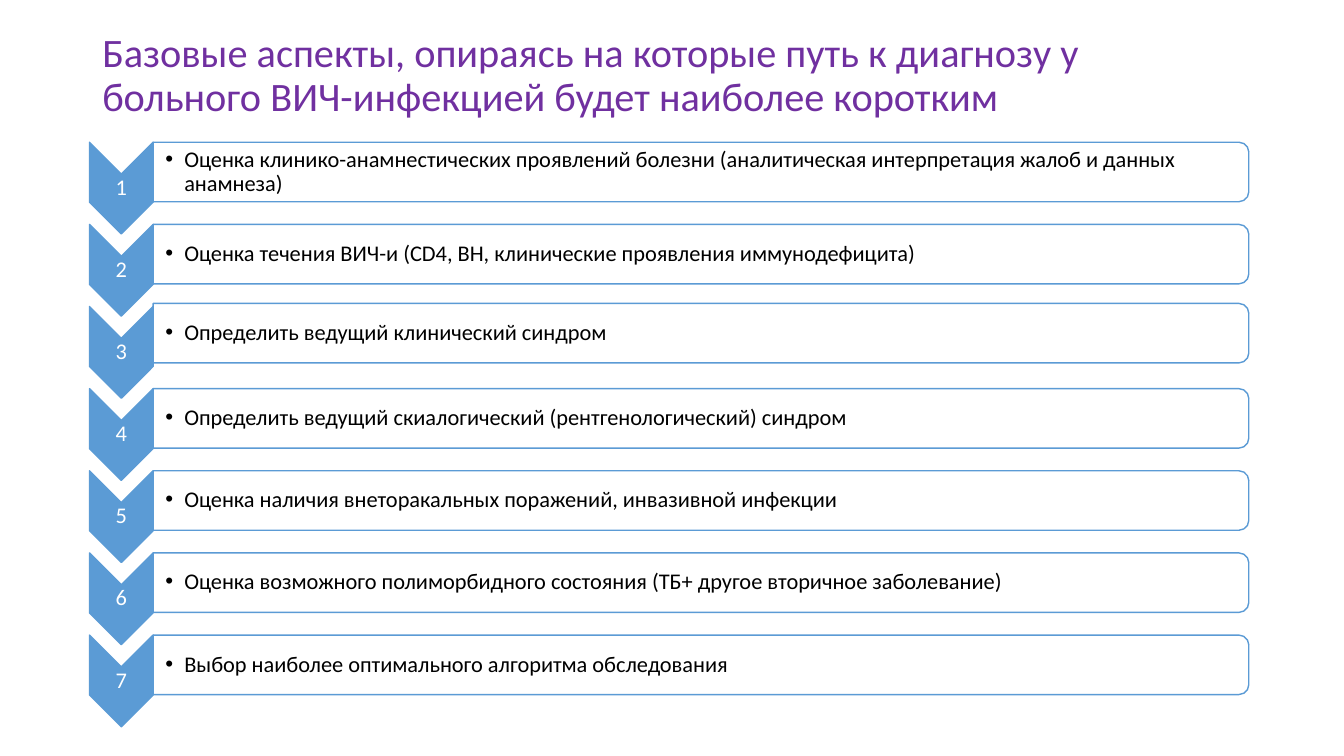
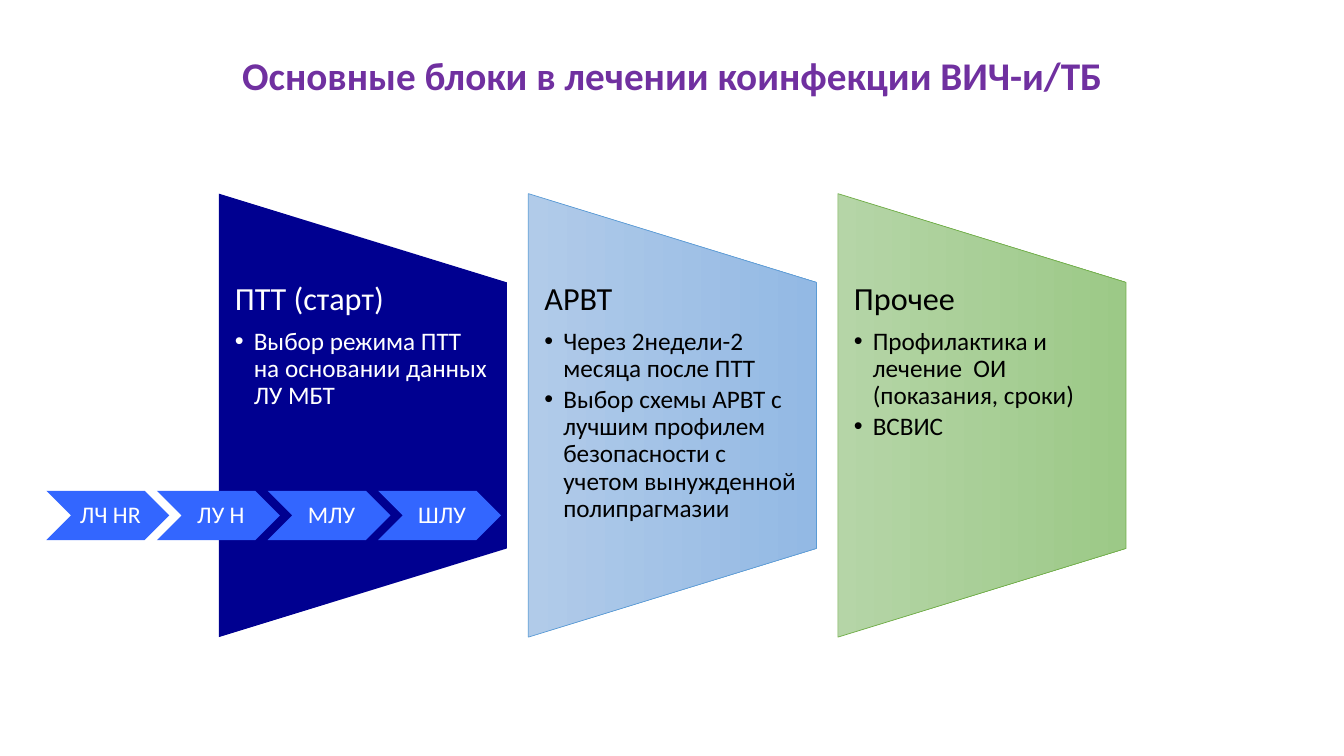
from lxml.etree import SubElement
from pptx import Presentation
from pptx.dml.color import RGBColor
from pptx.enum.shapes import MSO_SHAPE
from pptx.enum.text import MSO_ANCHOR, PP_ALIGN
from pptx.oxml.ns import qn
from pptx.util import Pt

FONT = "Calibri"
LINE_SPACING = 0.9
BULLET_INDENT = 13.5
COLORS = {
    "title": "7030A0",
    "step": "5B9BD5",
    "white": "FFFFFF",
    "black": "000000",
    "navy": "000090",
    "regimen": "3366FF",
    "blue_light": "B1CBE9",
    "blue_dark": "93B9E4",
    "green_light": "B5D5A7",
    "green_dark": "9CC987",
    "green_line": "70AD47",
}

STEPS = [
    "Оценка клинико-анамнестических проявлений болезни "
    "(аналитическая интерпретация жалоб и данных анамнеза)",
    "Оценка течения ВИЧ-и (CD4, ВН, клинические проявления иммунодефицита)",
    "Определить ведущий клинический синдром",
    "Определить ведущий скиалогический (рентгенологический) синдром",
    "Оценка наличия внеторакальных поражений, инвазивной инфекции",
    "Оценка возможного полиморбидного состояния (ТБ+ другое вторичное заболевание)",
    "Выбор наиболее оптимального алгоритма обследования",
]
BAR_SHIFTS = {3: -2.2}  # the third bar sits slightly above its row

# heading, bullets, fill colours, outline colour, text colour
BLOCKS = [
    ("ПТТ (старт)", ["Выбор режима ПТТ на основании данных ЛУ МБТ"],
     ["navy"], None, "white"),
    ("АРВТ", ["Через 2недели-2 месяца после ПТТ",
              "Выбор схемы АРВТ с лучшим профилем безопасности "
              "с учетом вынужденной полипрагмазии"],
     ["blue_light", "blue_dark"], "step", "black"),
    ("Прочее", ["Профилактика и лечение  ОИ (показания, сроки)", "ВСВИС"],
     ["green_light", "green_dark"], "green_line", "black"),
]
REGIMENS = ["ЛЧ HR", "ЛУ Н", "МЛУ", "ШЛУ"]


def rgb(name):
    return RGBColor.from_string(COLORS[name])


def add_figure(slide, preset, box, fills, line=None, line_width=1, rotation=0):
    """Add a preset; box is the area it covers on the slide after a quarter turn."""
    left, top, width, height = box
    if rotation in (90, 270):
        left, top = left + (width - height) / 2, top + (height - width) / 2
        width, height = height, width
    figure = slide.shapes.add_shape(preset, Pt(left), Pt(top), Pt(width), Pt(height))
    figure.rotation = rotation
    figure.shadow.inherit = False
    if len(fills) == 1:
        figure.fill.solid()
        figure.fill.fore_color.rgb = rgb(fills[0])
    else:
        figure.fill.gradient()
        figure.fill.gradient_angle = 270
        for stop, color in zip(figure.fill.gradient_stops, fills):
            stop.color.rgb = rgb(color)
    if line:
        figure.line.color.rgb = rgb(line)
        figure.line.width = Pt(line_width)
    else:
        figure.line.fill.background()
    return figure


def set_frame(frame, insets, anchor):
    frame.word_wrap = True
    frame.vertical_anchor = anchor
    (frame.margin_left, frame.margin_top,
     frame.margin_right, frame.margin_bottom) = map(Pt, insets)


def add_text_area(slide, box, insets, anchor=MSO_ANCHOR.MIDDLE):
    frame = slide.shapes.add_textbox(*map(Pt, box)).text_frame
    set_frame(frame, insets, anchor)
    return frame


def write(paragraph, text, size, color, align=PP_ALIGN.LEFT, bold=False, after=0):
    paragraph.text = text
    paragraph.alignment = align
    paragraph.line_spacing = LINE_SPACING
    paragraph.space_after = Pt(after)
    for run in paragraph.runs:
        run.font.name = FONT
        run.font.size = Pt(size)
        run.font.bold = bold
        run.font.color.rgb = rgb(color)


def write_bullet(paragraph, text, size, color):
    write(paragraph, text, size, color, after=round(size * 0.15, 1))
    properties = paragraph._p.get_or_add_pPr()
    properties.set("marL", str(Pt(BULLET_INDENT)))
    properties.set("indent", str(-Pt(BULLET_INDENT)))
    SubElement(properties, qn("a:buFont"), typeface="Arial")
    SubElement(properties, qn("a:buChar"), char="•")


def add_title(slide, text, box, size, align=PP_ALIGN.LEFT, bold=False):
    frame = add_text_area(slide, box, (7.2, 3.6, 7.2, 3.6))
    write(frame.paragraphs[0], text, size, "title", align, bold)


def add_step(slide, number, text):
    left, width, pitch = 63.9, 45.5, 58.67
    top = 101.6 + (number - 1) * pitch
    add_figure(slide, MSO_SHAPE.CHEVRON, (left, top, width, 65.5),
               ["step"], "step", rotation=90)
    label = add_text_area(slide, (left, top + 23, width, 19.4), (1, 1, 1, 1))
    write(label.paragraphs[0], str(number), 16, "white", PP_ALIGN.CENTER)

    bar_left = left + width
    bar_top = top + BAR_SHIFTS.get(number, 0)
    add_figure(slide, MSO_SHAPE.ROUND_2_SAME_RECTANGLE,
               (bar_left, bar_top, 782.6, 42.5), ["white"], "step", rotation=90)
    description = add_text_area(slide, (bar_left, bar_top + 2.1, 780.5, 38.3),
                                (8.8, 0.8, 0.8, 0.8))
    write_bullet(description.paragraphs[0], text, 16, "black")


def add_block(slide, index, heading, bullets, fills, line, text_color):
    left, width, pitch = 156.3, 205.8, 221.1
    left += index * pitch
    add_figure(slide, MSO_SHAPE.FLOWCHART_MANUAL_OPERATION,
               (left, 138.3, width, 316.8), fills, line, 0.5, rotation=270)
    frame = add_text_area(slide, (left, 201.7, width, 190), (11.5, 0, 11.5, 0),
                          MSO_ANCHOR.TOP)
    write(frame.paragraphs[0], heading, 23, text_color, after=8)
    for bullet in bullets:
        write_bullet(frame.add_paragraph(), bullet, 18, text_color)


def add_regimen(slide, index, text):
    chevron = add_figure(slide, MSO_SHAPE.CHEVRON,
                         (33.1 + index * 79, 350.6, 87.8, 35.2), ["regimen"])
    set_frame(chevron.text_frame, (5, 1.4, 1.4, 1.4), MSO_ANCHOR.MIDDLE)
    write(chevron.text_frame.paragraphs[0], text, 17, "white", PP_ALIGN.CENTER)


def build_diagnosis_slide(slide):
    add_title(slide, "Базовые аспекты, опираясь на которые путь к диагнозу "
              "у больного ВИЧ-инфекцией будет наиболее коротким",
              (66, 21, 828, 67), 28.8)
    for number, text in enumerate(STEPS, start=1):
        add_step(slide, number, text)


def build_treatment_slide(slide):
    add_title(slide, "Основные блоки в лечении коинфекции ВИЧ-и/ТБ",
              (156, 21.6, 648, 67.7), 28, PP_ALIGN.CENTER, bold=True)
    for index, block in enumerate(BLOCKS):
        add_block(slide, index, *block)
    for index, text in enumerate(REGIMENS):
        add_regimen(slide, index, text)


def main():
    deck = Presentation()
    deck.slide_width, deck.slide_height = Pt(960), Pt(540)
    blank = deck.slide_layouts[6]
    for build in (build_diagnosis_slide, build_treatment_slide):
        build(deck.slides.add_slide(blank))
    deck.save("out.pptx")


if __name__ == "__main__":
    main()
